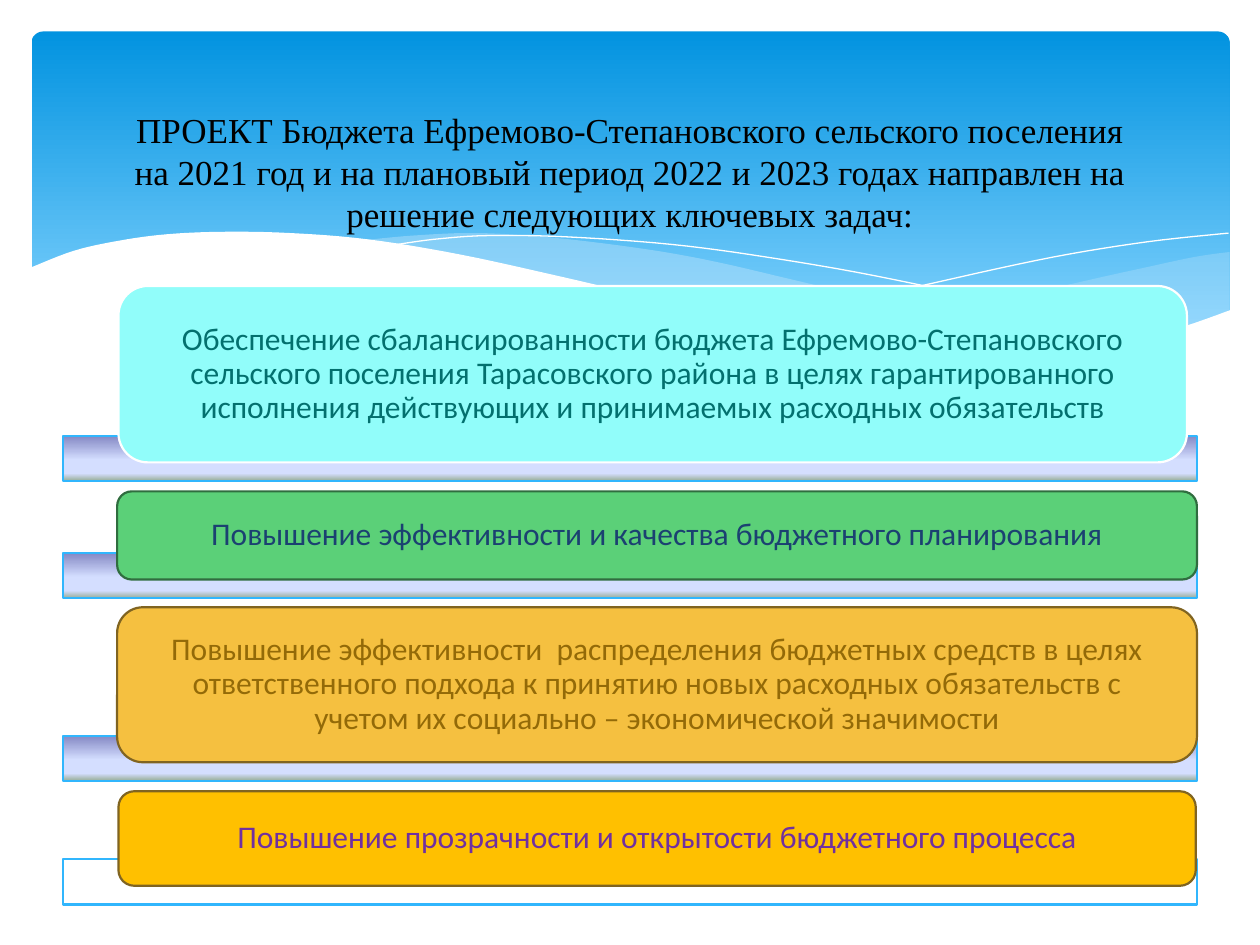
from pptx import Presentation
from pptx.util import Inches, Pt
from pptx.dml.color import RGBColor
from pptx.enum.shapes import MSO_SHAPE
from pptx.enum.text import MSO_ANCHOR, PP_ALIGN
from pptx.oxml.ns import qn
from lxml import etree

RECT, ROUND = MSO_SHAPE.RECTANGLE, MSO_SHAPE.ROUNDED_RECTANGLE
MIDDLE, CENTER = MSO_ANCHOR.MIDDLE, PP_ALIGN.CENTER

# Content
TITLE = ("ПРОЕКТ Бюджета Ефремово-Степановского сельского поселения\v"
         "на 2021 год и на плановый период 2022 и 2023 годах направлен на "
         "решение следующих ключевых задач:")
# Each task: text, (left, top, width, height), fill, outline, text colour
TASKS = [
    ("Обеспечение сбалансированности бюджета Ефремово-Степановского "
     "сельского поселения Тарасовского района в целях гарантированного "
     "исполнения действующих и принимаемых расходных обязательств",
     (9.4, 22.7, 84.8, 14), "91FDFA", "FFFFFF", "03706E"),
    ("Повышение эффективности и качества бюджетного планирования",
     (9.3, 39, 85.7, 7), "5BD078", "306D3F", "1B4171"),
    ("Повышение эффективности  распределения бюджетных средств в целях "
     "ответственного подхода к принятию новых расходных обязательств с "
     "учетом их социально – экономической значимости",
     (9.3, 48.2, 85.7, 12.3), "F5C040", "806421", "936A08"),
    ("Повышение прозрачности и открытости бюджетного процесса",
     (9.4, 62.8, 85.5, 7.5), "FFC000", "806421", "7030A0"),
]

THEME = {
    "white": "FFFFFF", "wave": "C6E7FC", "edge": "31B6FD", "title": "000000",
    "sky": [(0, "0293E0"), (90, "83D3FE")],
    "bar": [(0, "8488C4"), (53, "D4DEFF"), (83, "D4DEFF"), (100, "96AB94")],
    "head": ("Times New Roman", 20), "body": ("Calibri", 18), "line": 1.25,
}

# Waves: curved runs of points, fill colour, opacity in percent
WAVES = [
    ([[(97.6, 20), (94.8, 20.4), (90.6, 21.3), (86.1, 22.3), (77.9, 24.2),
       (72.9, 25.3), (66.1, 26.5)],
      [(66.1, 26.5), (71.9, 27.2), (76.9, 27.7), (81.4, 27.8), (86.3, 27.5),
       (90.5, 26.9), (94.2, 25.9), (97.6, 24.7)]], THEME["wave"], 29),
    ([[(89.3, 27.3), (83.7, 26.5), (77.5, 25.4), (70.6, 24), (62.9, 22.2),
       (56.9, 20.8), (51.4, 19.8), (44.2, 18.9), (38, 18.5), (32.8, 18.7),
       (28.6, 19.1)],
      [(28.6, 19.1), (36.2, 20.3), (44.9, 22.2), (53, 24), (60.1, 25.5),
       (66.5, 26.6), (72.2, 27.4), (77.3, 27.7), (82.8, 27.8),
       (89.3, 27.3)]], THEME["wave"], 40),
    ([[(30.9, 19.5), (34.4, 19), (38.7, 18.7), (45, 18.8), (53.3, 19.4),
       (60.8, 20.4), (69.5, 21.9), (79.5, 24.1), (90.7, 27.2)]], None, 100),
    ([[(61.3, 25.7), (67.2, 24.1), (74.8, 22.3), (83.6, 20.4), (91, 19.2),
       (97.5, 18.5)]], None, 100),
    ([[(97.7, 24.6), (93, 26.2), (87.5, 27.3), (80.9, 27.7), (72.6, 27.2),
       (64.8, 26.2), (55.5, 24.5), (44.7, 22), (36.5, 20.2), (29.2, 19),
       (23, 18.5), (17.7, 18.4), (13.2, 18.6), (9.5, 19.1), (5.9, 19.9),
       (2.3, 21.3)],
      [(2.3, 32.9), (97.7, 32.9)]], THEME["white"], 100),
]

prs = Presentation()
prs.slide_width, prs.slide_height = Inches(10), Inches(7.5)
UNIT = prs.slide_width / 100
slide = prs.slides.add_slide(prs.slide_layouts[6])


def span(*nums):
    """Turn shares of the slide width into lengths."""
    return [round(n * UNIT) for n in nums]


def paint(shape, fill=None, line=None, width=0, alpha=100):
    shape.shadow.inherit = False
    if isinstance(fill, list):
        shape.fill.gradient()
        shape.fill.gradient_angle = 270
        stops = next(shape.element.iter(qn("a:gsLst")))
        for old in list(stops):
            stops.remove(old)
        for pos, tone in fill:
            stop = etree.SubElement(stops, qn("a:gs"), pos=str(pos * 1000))
            etree.SubElement(stop, qn("a:srgbClr"), val=tone)
    elif fill:
        shape.fill.solid()
        shape.fill.fore_color.rgb = RGBColor.from_string(fill)
        if alpha < 100:
            tint = next(shape.element.spPr.iter(qn("a:srgbClr")))
            etree.SubElement(tint, qn("a:alpha"), val=str(alpha * 1000))
    else:
        shape.fill.background()
    if line:
        shape.line.color.rgb = RGBColor.from_string(line)
        shape.line.width = Pt(width)
    else:
        shape.line.fill.background()


def add_box(kind, area, **look):
    shape = slide.shapes.add_shape(kind, *span(*area))
    paint(shape, **look)
    return shape


def write(shape, text, font, tone, pad, foot=0, space=1.0):
    frame = shape.text_frame
    frame.word_wrap = True
    frame.vertical_anchor = MIDDLE
    frame.margin_left, frame.margin_right = span(pad, pad)
    frame.margin_top, frame.margin_bottom = span(0, foot)
    para = frame.paragraphs[0]
    para.text = text
    para.alignment, para.line_spacing = CENTER, space
    for run in para.runs:
        run.font.name, run.font.size = font[0], Pt(font[1])
        run.font.color.rgb = RGBColor.from_string(tone)


def smooth(pts, steps=6):
    """Run a Catmull-Rom curve through the points."""
    if len(pts) < 3:
        return pts
    ends = [pts[0], *pts, pts[-1]]
    out = [pts[0]]
    for a, b, c, d in zip(ends, ends[1:], ends[2:], ends[3:]):
        for k in range(1, steps + 1):
            t = k / steps
            out.append(tuple(
                q + t * (r - p + t * (2 * p - 5 * q + 4 * r - s
                                      + t * (3 * q - p - 3 * r + s))) / 2
                for p, q, r, s in zip(a, b, c, d)))
    return out


# Sky panel and waves
sky = add_box(ROUND, (2.5, 2.5, 95.1, 27), fill=THEME["sky"])
sky.adjustments[0] = 0.034
for runs, tone, alpha in WAVES:
    pts = [span(*pt) for run in runs for pt in smooth(run)]
    pen = slide.shapes.build_freeform(*pts[0])
    pen.add_line_segments(pts[1:], close=bool(tone))
    paint(pen.convert_to_shape(), tone,
          None if tone else THEME["white"], 0, alpha)

# Task cards, each over a bar that peeks out below it
for text, area, fill, edge, tone in TASKS:
    last = text == TASKS[-1][0]
    add_box(RECT, (5, area[1] + area[3] - 2.1, 90, 3.6),
            fill=THEME["white"] if last else THEME["bar"],
            line=THEME["edge"], width=THEME["line"],
            alpha=90 if last else 100)
    card = add_box(ROUND, area, fill=fill, line=edge, width=THEME["line"])
    write(card, text, THEME["body"], tone, pad=2.4, space=0.9)

# Title
head = slide.shapes.add_textbox(*span(5, 7.8, 90, 14.8))
write(head, TITLE, THEME["head"], THEME["title"], pad=1, foot=3.2)

prs.save("out.pptx")
